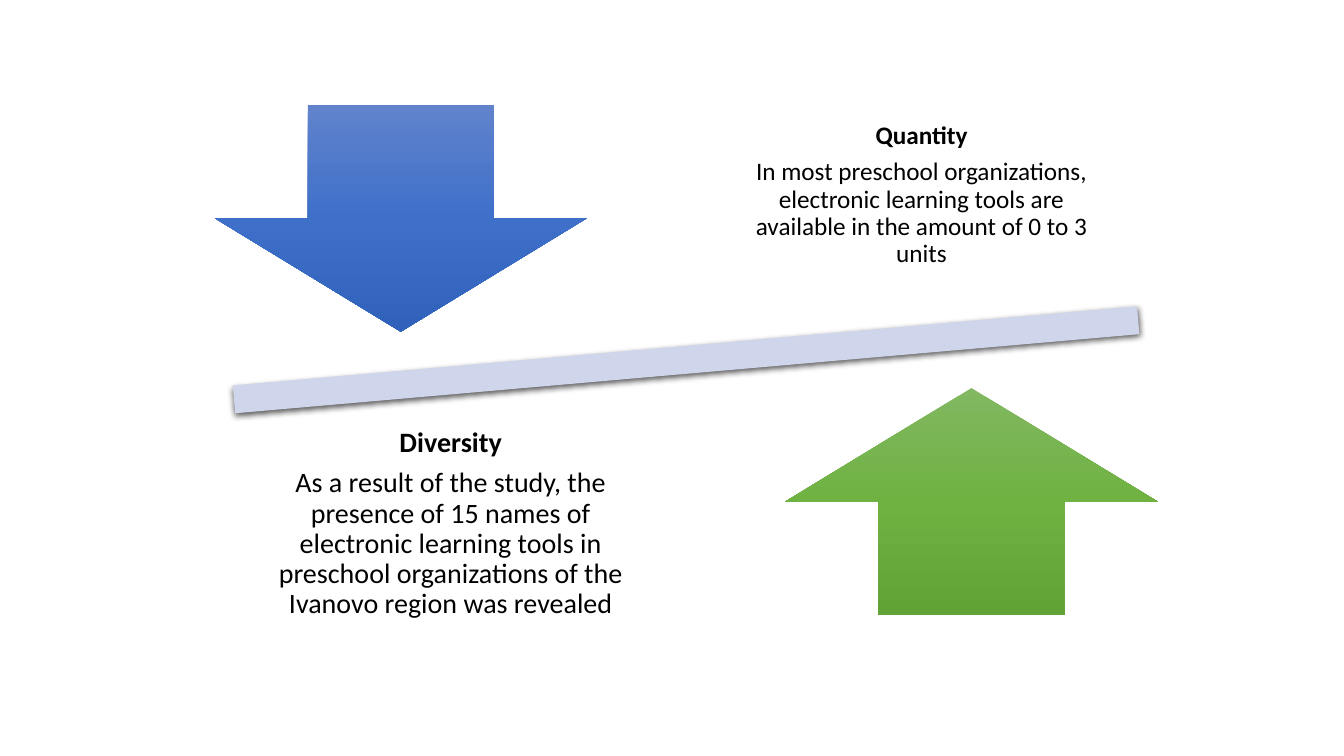
import pptx
import pptx.util
import pptx.dml.color
import pptx.enum.shapes
import pptx.enum.text
import pptx.oxml
import copy

Inches = pptx.util.Inches
Shapes = pptx.enum.shapes.MSO_SHAPE

COLOURS = {
    "text": "000000",
    "beam": "CFD5EA",
    "shadow": "000000",
}
GRADIENTS = {
    "blue": ("6183CB", "3E70CA", "3062BB"),
    "green": ("81B861", "6FB242", "62A336"),
}
FONT = "Calibri"
ARROW_SIZE = (3.69, 2.25)
TEXT_SIZE = (3.94, 2.36)


def colour(value):
    return pptx.dml.color.RGBColor.from_string(value)


def add_plain_shape(page, kind, box):
    shape = page.shapes.add_shape(kind, *map(Inches, box))
    shape.shadow.inherit = False
    shape.line.fill.background()
    return shape


def add_beam(page, box):
    """Tilted bar with a soft shadow below it."""
    beam = add_plain_shape(page, Shapes.MATH_MINUS, box)
    beam.rotation = 355
    beam.fill.solid()
    beam.fill.fore_color.rgb = colour(COLOURS["beam"])
    effects = beam._element.spPr.find(pptx.oxml.ns.qn("a:effectLst"))
    effects.append(pptx.oxml.parse_xml(
        f'<a:outerShdw {pptx.oxml.ns.nsdecls("a")} blurRad="57150" dist="19050" '
        'dir="5400000" algn="ctr" rotWithShape="0">'
        f'<a:srgbClr val="{COLOURS["shadow"]}"><a:alpha val="63000"/></a:srgbClr>'
        '</a:outerShdw>'))


def add_arrow(page, kind, box, shades):
    """Block arrow with a three-stop vertical gradient."""
    arrow = add_plain_shape(page, kind, box)
    arrow.fill.gradient()
    arrow.fill.gradient_angle = 270
    first = arrow._element.spPr.find(".//" + pptx.oxml.ns.qn("a:gs"))
    first.addnext(copy.deepcopy(first))
    for stop, place, shade in zip(arrow.fill.gradient_stops, (0, 0.5, 1), shades):
        stop.position = place
        stop.color.rgb = colour(shade)


def add_finding(page, box, heading, statement, size, inset):
    """Bold heading over a centred statement."""
    frame = page.shapes.add_textbox(*map(Inches, box)).text_frame
    frame.word_wrap = True
    frame.vertical_anchor = pptx.enum.text.MSO_ANCHOR.MIDDLE
    frame.margin_left = frame.margin_right = Inches(inset)
    frame.margin_top = frame.margin_bottom = Inches(inset)
    frame.text = f"{heading}\n{statement}"
    for index, para in enumerate(frame.paragraphs):
        para.alignment = pptx.enum.text.PP_ALIGN.CENTER
        para.line_spacing = 0.9
        para.space_after = pptx.util.Pt(0.35 * size)
        for span in para.runs:
            span.font.name = FONT
            span.font.size = pptx.util.Pt(size)
            span.font.bold = index == 0
            span.font.color.rgb = colour(COLOURS["text"])


def build_balance(page):
    add_beam(page, (0.68, 2.98, 12.25, 1.18))

    # Upper half: falling quantity
    add_arrow(page, Shapes.DOWN_ARROW, (2.13, 1.04, *ARROW_SIZE), GRADIENTS["blue"])
    add_finding(page, (7.17, 0.76, *TEXT_SIZE), "Quantity",
                "In most preschool organizations, electronic learning tools are "
                "available in the amount of 0 to 3 units", 18, 0.14)

    # Lower half: rising diversity
    add_arrow(page, Shapes.UP_ARROW, (7.79, 3.85, *ARROW_SIZE), GRADIENTS["green"])
    add_finding(page, (2.5, 4.02, *TEXT_SIZE), "Diversity",
                "As a result of the study, the presence of 15 names of electronic "
                "learning tools in preschool organizations of the Ivanovo region "
                "was revealed", 20, 0.16)


def main():
    deck = pptx.Presentation()
    deck.slide_width, deck.slide_height = Inches(13.33), Inches(7.5)
    build_balance(deck.slides.add_slide(deck.slide_layouts[6]))
    deck.save("out.pptx")


if __name__ == "__main__":
    main()
